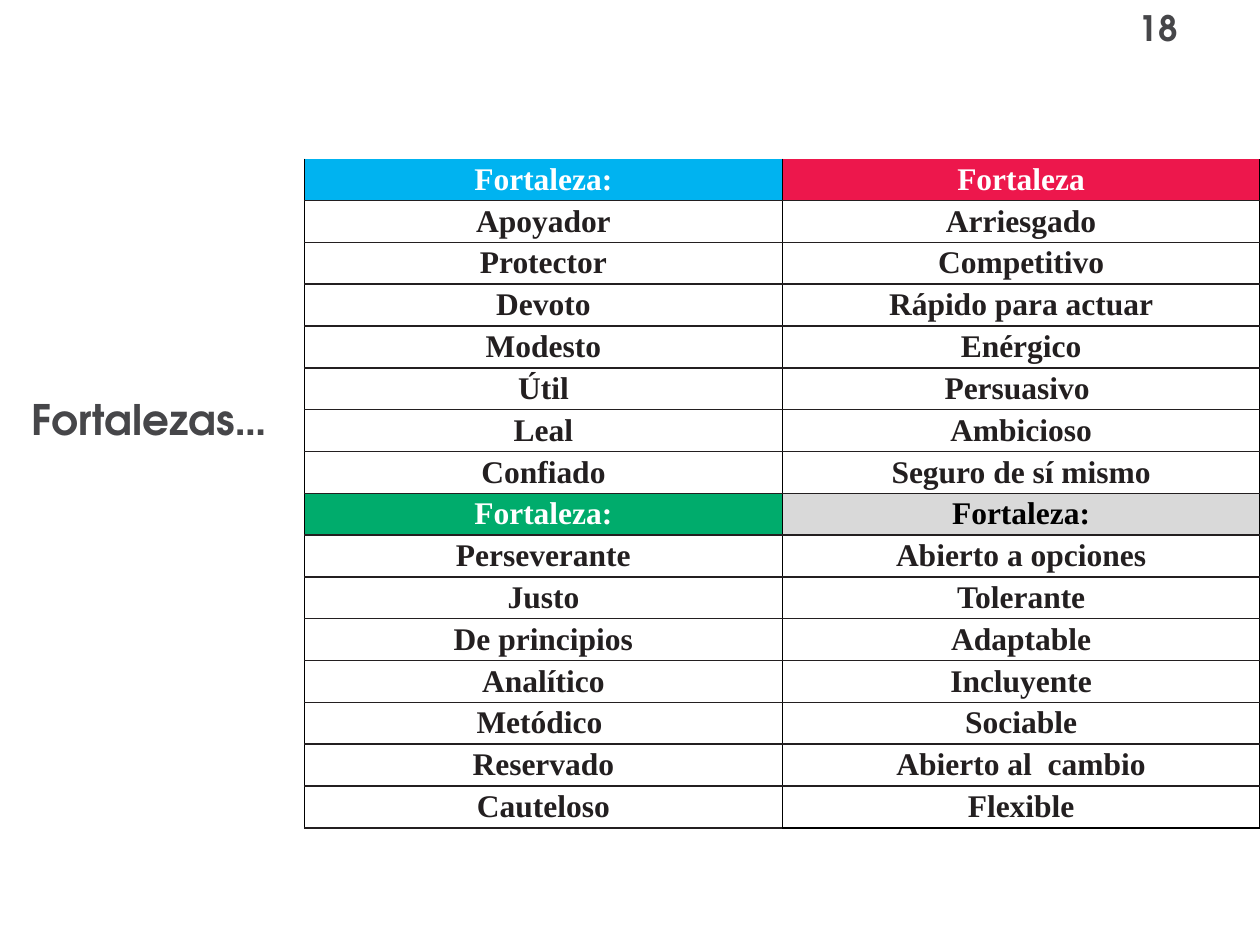
from dataclasses import dataclass

from lxml.etree import SubElement
from pptx import Presentation
from pptx.dml.color import RGBColor as Rgb
from pptx.enum.text import MSO_ANCHOR as Anchor, MSO_AUTO_SIZE as AutoSize, PP_ALIGN as Align
from pptx.oxml.ns import qn
from pptx.slide import Slide
from pptx.table import _Cell as Cell
from pptx.text.text import TextFrame
from pptx.util import Cm, Pt


@dataclass(frozen=True)
class Theme:
    heading_font: str = "TeX Gyre Adventor"
    table_font: str = "Times New Roman"
    heading: str = "464649"
    ink: str = "231F20"
    black: str = "000000"
    white: str = "FFFFFF"
    blue: str = "00B3F0"
    red: str = "ED174C"
    green: str = "00AC6C"
    grey: str = "D9D9D9"
    title_size: int = 24
    number_size: int = 20
    table_size: int = 18


THEME = Theme()


@dataclass(frozen=True)
class Strengths:
    header: str
    fill: str
    header_color: str
    traits: tuple[str, ...]


@dataclass(frozen=True)
class Label:
    text: str
    left: float
    top: float
    width: float
    height: float
    size: int
    align: Align
    anchor: Anchor
    auto_size: AutoSize


LABELS = (
    Label("18", 22.71, 0, 2.39, 1.12, THEME.number_size, Align.LEFT, Anchor.TOP,
          AutoSize.SHAPE_TO_FIT_TEXT),
    Label("Fortalezas…", -2.46, 7.67, 10.95, 1.55, THEME.title_size, Align.CENTER, Anchor.MIDDLE,
          AutoSize.NONE),
)

QUADRANTS = (
    (
        Strengths("Fortaleza:", THEME.blue, THEME.white, (
            "Apoyador", "Protector", "Devoto", "Modesto", "Útil", "Leal", "Confiado")),
        Strengths("Fortaleza", THEME.red, THEME.white, (
            "Arriesgado", "Competitivo", "Rápido para actuar", "Enérgico", "Persuasivo ",
            "Ambicioso", "Seguro de sí mismo")),
    ),
    (
        Strengths("Fortaleza:", THEME.green, THEME.white, (
            "Perseverante", "Justo", "De principios", "Analítico", "Metódico ", "Reservado",
            "Cauteloso")),
        Strengths("Fortaleza:", THEME.grey, THEME.black, (
            "Abierto a opciones", "Tolerante", "Adaptable", "Incluyente", "Sociable",
            "Abierto al  cambio", "Flexible")),
    ),
)


def write(frame: TextFrame, text: str, *, font: str, size: int, color: str, align: Align) -> None:
    """Write one bold line of text in the given format."""
    paragraph = frame.paragraphs[0]
    paragraph.alignment = align
    run = paragraph.add_run()
    run.text = text
    run.font.name = font
    run.font.size = Pt(size)
    run.font.bold = True
    run.font.color.rgb = Rgb.from_string(color)


def add_label(slide: Slide, label: Label) -> None:
    """Add a heading text box."""
    frame = slide.shapes.add_textbox(
        Cm(label.left), Cm(label.top), Cm(label.width), Cm(label.height)).text_frame
    frame.word_wrap = True
    frame.auto_size = label.auto_size
    frame.vertical_anchor = label.anchor
    write(frame, label.text, font=THEME.heading_font, size=label.size,
          color=THEME.heading, align=label.align)


def set_borders(cell: Cell, borders: dict[str, str | None]) -> None:
    """Draw the cell's edges, leaving out those without a colour."""
    properties = cell._tc.get_or_add_tcPr()
    for edge, color in borders.items():
        line = SubElement(properties, qn(f"a:ln{edge}"), w=str(Pt(1)))
        if color is None:
            SubElement(line, qn("a:noFill"))
        else:
            SubElement(SubElement(line, qn("a:solidFill")), qn("a:srgbClr"), val=color)


def fill_cell(cell: Cell, text: str, *, fill: str, color: str,
              top: str | None, bottom: str) -> None:
    """Format one table cell and write its text."""
    set_borders(cell, {"L": THEME.black, "R": THEME.black, "T": top, "B": bottom})
    cell.fill.solid()
    cell.fill.fore_color.rgb = Rgb.from_string(fill)
    cell.margin_left = cell.margin_right = cell.margin_top = cell.margin_bottom = 0
    cell.vertical_anchor = Anchor.MIDDLE
    write(cell.text_frame, text, font=THEME.table_font, size=THEME.table_size,
          color=color, align=Align.CENTER)


def add_strengths_table(slide: Slide) -> None:
    """Add the table with its four groups of strengths."""
    band = 1 + len(QUADRANTS[0][0].traits)
    row_count, column_count = band * len(QUADRANTS), len(QUADRANTS[0])
    table = slide.shapes.add_table(
        row_count, column_count, Cm(6.14), Cm(3.2), Cm(19.26), Cm(13.49)).table
    table.first_row = table.horz_banding = False
    for band_index, groups in enumerate(QUADRANTS):
        for column, group in enumerate(groups):
            for offset, text in enumerate((group.header, *group.traits)):
                row = band_index * band + offset
                is_header = offset == 0
                is_last = row == row_count - 1 and column == column_count - 1
                fill_cell(
                    table.cell(row, column), text,
                    fill=group.fill if is_header else THEME.white,
                    color=group.header_color if is_header else THEME.ink,
                    top=THEME.ink if row else None,
                    bottom=THEME.black if is_last else THEME.ink)


def main() -> None:
    """Build and save the slide."""
    deck = Presentation()
    deck.slide_width, deck.slide_height = Cm(25.4), Cm(19.05)
    slide = deck.slides.add_slide(deck.slide_layouts[6])
    for label in LABELS:
        add_label(slide, label)
    add_strengths_table(slide)
    deck.save("out.pptx")


if __name__ == "__main__":
    main()
